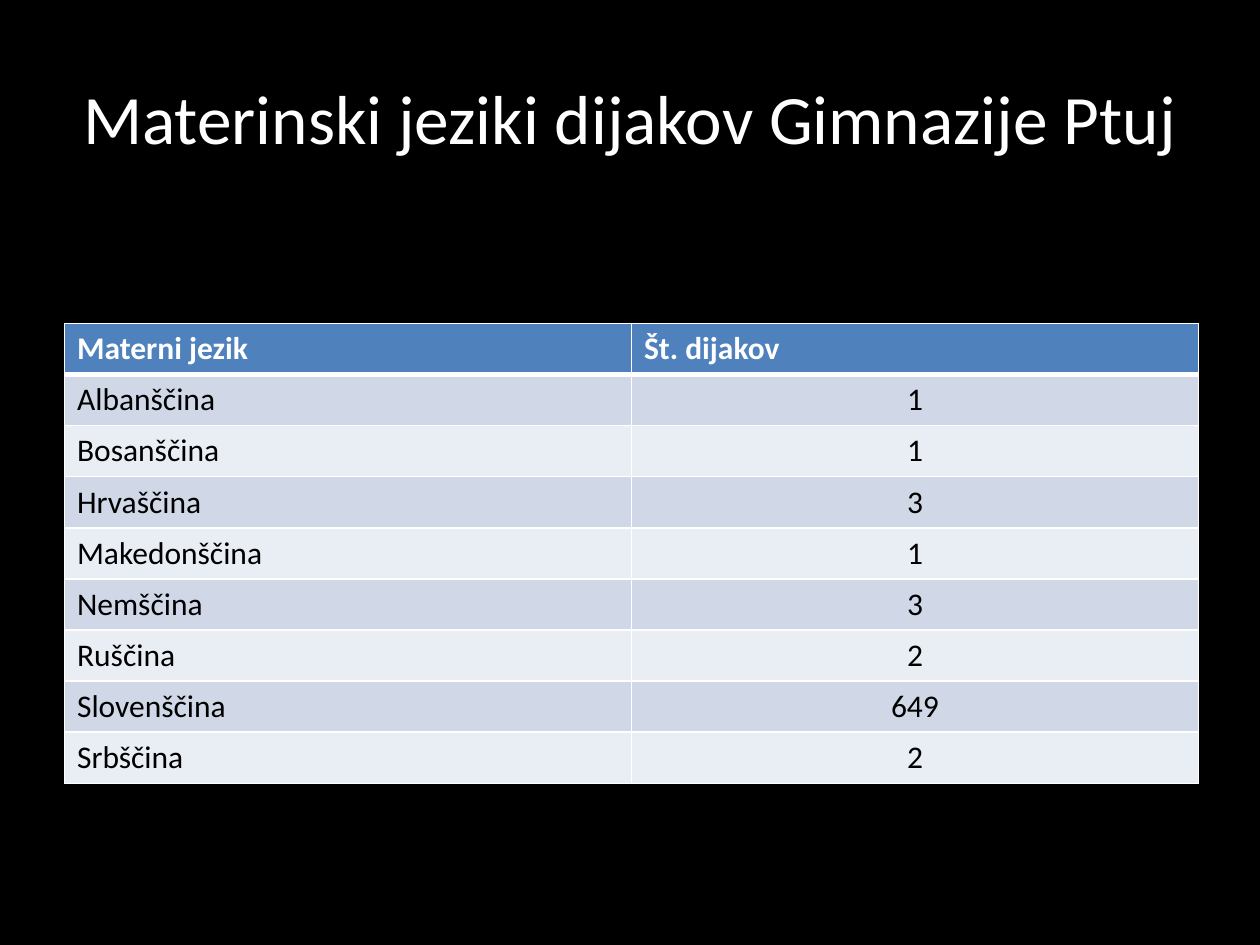
import pptx
import pptx.dml.color
import pptx.enum.text
import pptx.oxml
import pptx.oxml.ns
import pptx.util

Cm, Pt = pptx.util.Cm, pptx.util.Pt
ALIGN = pptx.enum.text.PP_ALIGN

TITLE = "Materinski jeziki dijakov Gimnazije Ptuj"
HEADER = ("Materni jezik", "Št. dijakov")
LANGUAGES = [
    ("Albanščina", 1),
    ("Bosanščina", 1),
    ("Hrvaščina", 3),
    ("Makedonščina", 1),
    ("Nemščina", 3),
    ("Ruščina", 2),
    ("Slovenščina", 649),
    ("Srbščina", 2),
]
COLORS = {
    "background": "000000",
    "light": "FFFFFF",
    "dark": "000000",
    "header": "4F81BD",
    "odd": "D0D8E8",
    "even": "E9EDF4",
}
FONT = "Calibri"
COLUMN_WIDTH, ROW_HEIGHT = Cm(11.43), Cm(1.03)


def rgb(name):
    return pptx.dml.color.RGBColor.from_string(COLORS[name])


def write(frame, text, size, color, bold=False, align=ALIGN.LEFT):
    frame.text = text
    para = frame.paragraphs[0]
    para.alignment = align
    font = para.runs[0].font
    font.name, font.size, font.bold = FONT, Pt(size), bold
    font.color.rgb = rgb(color)


def add_borders(cell, widths):
    """Draw the cell's edges; widths maps L, R, T, B to points, in that order."""
    properties = cell._tc.get_or_add_tcPr()
    for side, width in widths.items():
        properties.append(pptx.oxml.parse_xml(
            f'<a:ln{side} {pptx.oxml.ns.nsdecls("a")} w="{Pt(width)}">'
            f'<a:solidFill><a:srgbClr val="{COLORS["light"]}"/></a:solidFill>'
            f'</a:ln{side}>'))


def add_title(page):
    box = page.shapes.add_textbox(Cm(1.27), Cm(0.76), Cm(22.86), Cm(3.18))
    frame = box.text_frame
    frame.word_wrap = True
    frame.vertical_anchor = pptx.enum.text.MSO_ANCHOR.MIDDLE
    write(frame, TITLE, 39.6, "light", align=ALIGN.CENTER)


def add_language_table(page):
    rows = [HEADER] + LANGUAGES
    table = page.shapes.add_table(
        len(rows), len(HEADER), Cm(1.3), Cm(6.52),
        COLUMN_WIDTH * len(HEADER), ROW_HEIGHT * len(rows)).table
    for column in table.columns:
        column.width = COLUMN_WIDTH
    for r, values in enumerate(rows):
        table.rows[r].height = ROW_HEIGHT
        is_header = r == 0
        fill = "header" if is_header else ("odd" if r % 2 else "even")
        for c, value in enumerate(values):
            cell = table.cell(r, c)
            add_borders(cell, {"L": 1, "R": 1, "T": 3 if r == 1 else 1,
                               "B": 3 if is_header else 1})
            cell.fill.solid()
            cell.fill.fore_color.rgb = rgb(fill)
            centred = c == 1 and not is_header
            write(cell.text_frame, str(value), 18,
                  "light" if is_header else "dark", is_header,
                  ALIGN.CENTER if centred else ALIGN.LEFT)


def main():
    deck = pptx.Presentation()
    deck.slide_width, deck.slide_height = Cm(25.4), Cm(19.05)
    page = deck.slides.add_slide(deck.slide_layouts[6])
    page.background.fill.solid()
    page.background.fill.fore_color.rgb = rgb("background")
    add_title(page)
    add_language_table(page)
    deck.save("out.pptx")


if __name__ == "__main__":
    main()
